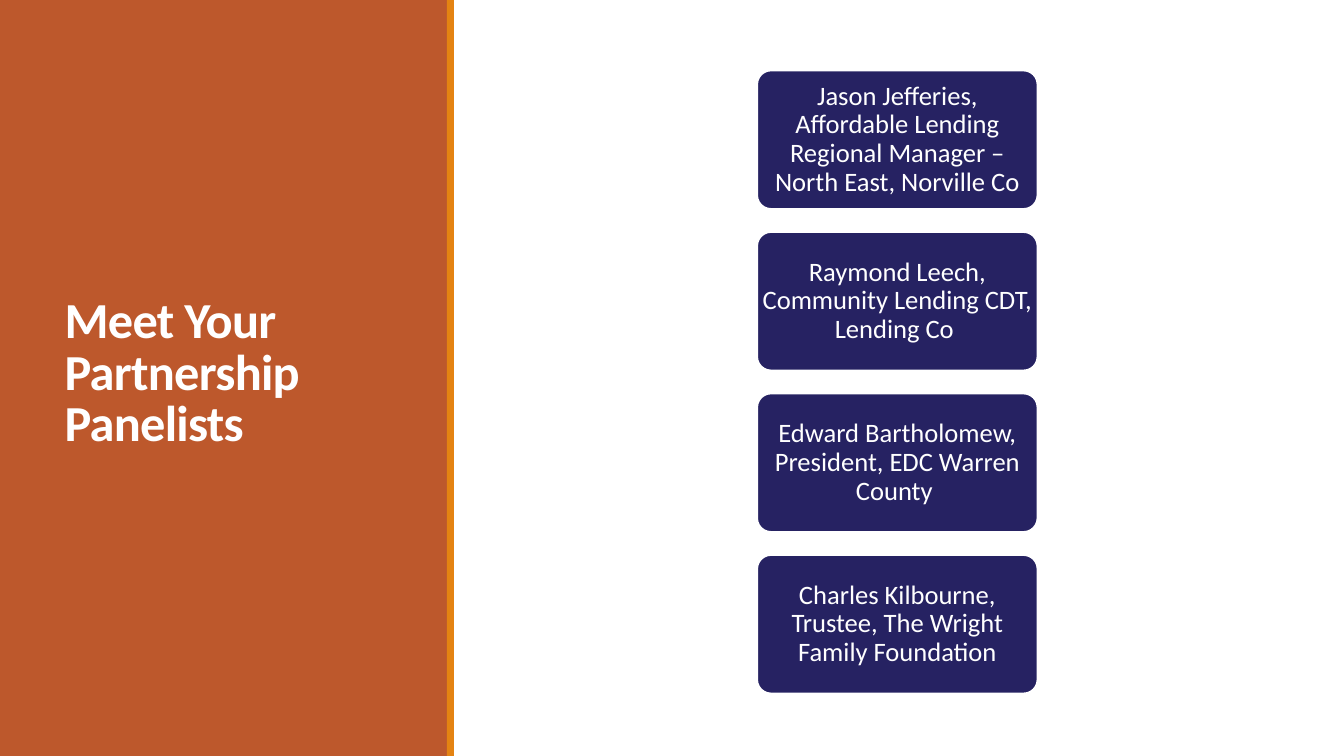
from pptx import Presentation
from pptx.dml.color import RGBColor
from pptx.enum.shapes import MSO_SHAPE as Preset
from pptx.enum.text import MSO_ANCHOR as Anchor, MSO_AUTO_SIZE as AutoSize, PP_ALIGN as Align
from pptx.util import Inches, Pt

COLORS = {"rust": "BD582C", "amber": "E48312", "navy": "262262", "white": "FFFFFF"}
FONT = "Calibri"
WIDTH, HEIGHT = 13.33, 7.5
PANELISTS = [
    "Jason Jefferies, Affordable Lending Regional Manager – North East, Norville Co",
    "Raymond Leech, Community Lending CDT, Lending Co\u00a0",
    "Edward Bartholomew, President, EDC Warren County\u00a0",
    "Charles Kilbourne, Trustee, The Wright Family Foundation",
]


def color(name):
    return RGBColor.from_string(COLORS[name])


def add_block(slide, preset, box, fill):
    block = slide.shapes.add_shape(preset, *map(Inches, box))
    block.shadow.inherit = False
    block.fill.solid()
    block.fill.fore_color.rgb = color(fill)
    block.line.fill.background()
    return block


def style_text(frame, size, align, line_spacing, bold=False):
    frame.word_wrap = True
    frame.auto_size = AutoSize.NONE
    frame.vertical_anchor = Anchor.MIDDLE
    paragraph = frame.paragraphs[0]
    paragraph.alignment = align
    paragraph.line_spacing = line_spacing
    font = paragraph.runs[0].font
    font.name, font.size, font.bold = FONT, Pt(size), bold
    font.color.rgb = color("white")


def add_title_panel(slide, box):
    left, top, width, height = box
    stripe = 0.07
    add_block(slide, Preset.RECTANGLE, box, "rust")
    add_block(slide, Preset.RECTANGLE, (left + width - 0.01, top, stripe, height), "amber")
    title = slide.shapes.title
    title.left, title.top = Inches(left + 0.54), Inches(top + 0.57)
    title.width, title.height = Inches(width * 0.76), Inches(height * 0.84)
    title.text_frame.text = "Meet Your Partnership Panelists"
    style_text(title.text_frame, 36, Align.LEFT, 0.85, bold=True)
    title.text_frame.paragraphs[0].runs[0].font._element.set("spc", "-50")
    title.element.getparent().append(title.element)


def add_panelists(slide, box):
    left, top, width, height = box
    gap_share = 1 / 6
    count = len(PANELISTS)
    card_height = height / (count + (count - 1) * gap_share)
    pitch = card_height * (1 + gap_share)
    for row, panelist in enumerate(PANELISTS):
        card = add_block(slide, Preset.ROUNDED_RECTANGLE,
                         (left, top + row * pitch, width, card_height), "navy")
        card.adjustments[0] = 0.1
        card.line.color.rgb = color("white")
        card.line.width = Pt(1.25)
        frame = card.text_frame
        frame.text = panelist
        frame.margin_left = frame.margin_right = Inches(0.01)
        frame.margin_top = frame.margin_bottom = Inches(0.01)
        style_text(frame, 19, Align.CENTER, 0.9)


def main():
    deck = Presentation()
    deck.slide_width, deck.slide_height = Inches(WIDTH), Inches(HEIGHT)
    slide = deck.slides.add_slide(deck.slide_layouts[5])
    slide.background.fill.solid()
    slide.background.fill.fore_color.rgb = color("white")
    add_title_panel(slide, (0, 0, WIDTH / 3, HEIGHT))
    add_panelists(slide, (7.51, 0.7, 2.78, 6.18))
    deck.save("out.pptx")


if __name__ == "__main__":
    main()
